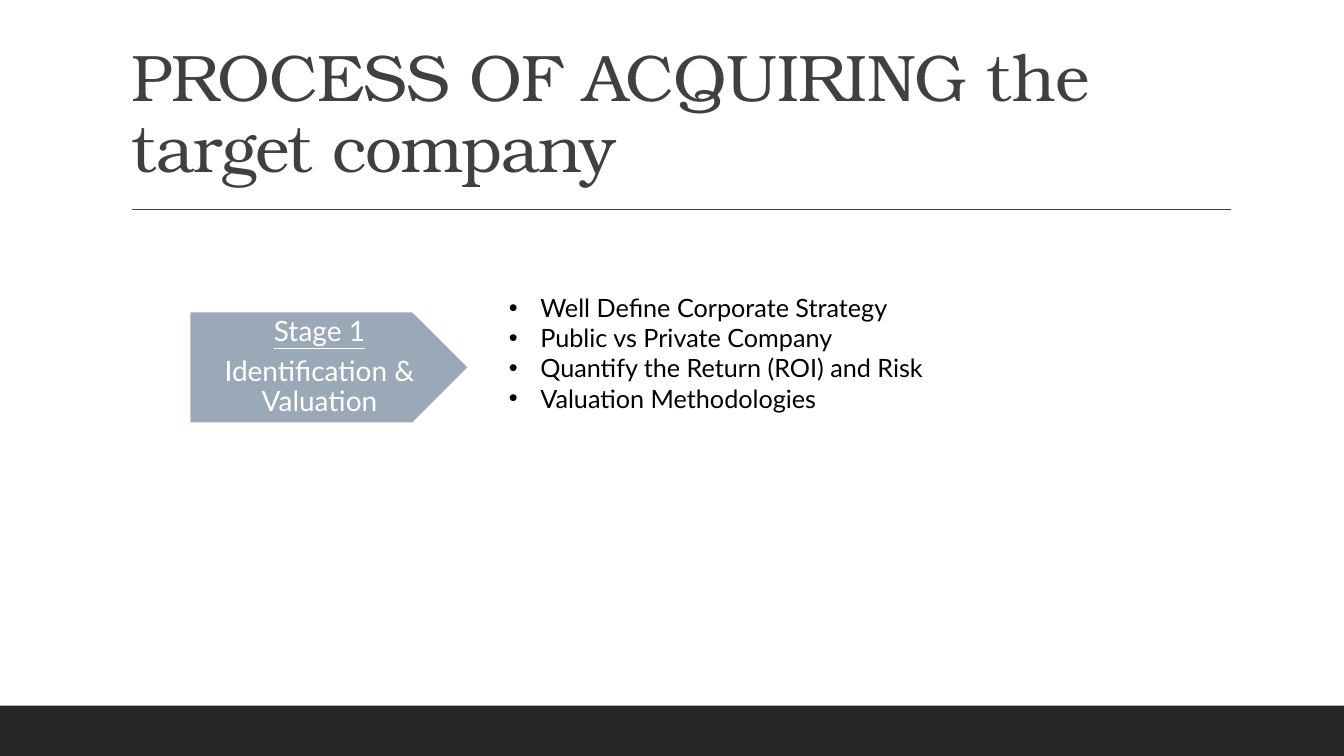
from lxml import etree
from pptx import Presentation
from pptx.dml.color import RGBColor
from pptx.enum.shapes import MSO_CONNECTOR, MSO_SHAPE
from pptx.enum.text import MSO_ANCHOR, MSO_AUTO_SIZE, PP_ALIGN
from pptx.oxml.ns import qn
from pptx.util import Pt

LEFT, CENTER = PP_ALIGN.LEFT, PP_ALIGN.CENTER
BOTTOM, MIDDLE, TOP = MSO_ANCHOR.BOTTOM, MSO_ANCHOR.MIDDLE, MSO_ANCHOR.TOP
NO_AUTOFIT = MSO_AUTO_SIZE.NONE
RECTANGLE, PENTAGON = MSO_SHAPE.RECTANGLE, MSO_SHAPE.PENTAGON
STRAIGHT = MSO_CONNECTOR.STRAIGHT


def color(hex_value):
    return RGBColor.from_string(hex_value)


def write(frame, lines, font_name, size, hex_value, paragraph_format, frame_format):
    for name, value in frame_format.items():
        setattr(frame, name, value)
    frame.text = "\n".join(lines)
    for paragraph in frame.paragraphs:
        for name, value in paragraph_format.items():
            setattr(paragraph, name, value)
        font = paragraph.runs[0].font
        font.name, font.size = font_name, Pt(size)
        font.color.rgb = color(hex_value)


prs = Presentation()
prs.slide_width, prs.slide_height = Pt(960), Pt(540)
slide = prs.slides.add_slide(prs.slide_layouts[5])
shapes = slide.shapes

footer_band = shapes.add_shape(RECTANGLE, Pt(0), Pt(504), Pt(960), Pt(36))
footer_band.shadow.inherit = False
footer_band.fill.solid()
footer_band.fill.fore_color.rgb = color("262626")
footer_band.line.fill.background()

title_rule = shapes.add_connector(STRAIGHT, Pt(94.3), Pt(149.5), Pt(879), Pt(149.5))
title_rule.line.color.rgb = color("404040")
title_rule.line.width = Pt(1)
etree.SubElement(title_rule._element.spPr, qn("a:effectLst"))

title = shapes.title
title.left, title.top, title.width, title.height = Pt(86.4), Pt(22.3), Pt(792), Pt(114.5)
write(title.text_frame, ["PROCESS OF ACQUIRING the target company"],
      "TeX Gyre Bonum", 47, "404040",
      {"alignment": LEFT, "line_spacing": 0.9},
      {"auto_size": NO_AUTOFIT, "word_wrap": True, "vertical_anchor": BOTTOM})
title.text_frame.paragraphs[0].runs[0].font._element.set("spc", "-50")

stage = shapes.add_shape(PENTAGON, Pt(135.4), Pt(222.5), Pt(199.4), Pt(79.9))
stage.shadow.inherit = False
stage.fill.solid()
stage.fill.fore_color.rgb = color("9BA8B7")
stage.line.color.rgb = color("FFFFFF")
stage.line.width = Pt(1.25)
write(stage.text_frame, ["Stage 1", "Identification & Valuation"],
      "Lato", 20, "FFFFFF",
      {"alignment": CENTER, "line_spacing": 0.9, "space_after": Pt(7)},
      {"word_wrap": True, "vertical_anchor": MIDDLE,
       "margin_left": Pt(8.4), "margin_right": Pt(2.1),
       "margin_top": Pt(4.2), "margin_bottom": Pt(4.2)})
stage.text_frame.paragraphs[0].runs[0].font.underline = True

steps = shapes.add_textbox(Pt(356.4), Pt(205.2), Pt(321), Pt(138.2))
write(steps.text_frame,
      ["Well Define Corporate Strategy", "Public vs Private Company",
       "Quantify the Return (ROI) and Risk", "Valuation Methodologies"],
      "Lato", 18, "000000", {"alignment": LEFT},
      {"word_wrap": True, "vertical_anchor": TOP})
for step in steps.text_frame.paragraphs:
    properties = step._p.get_or_add_pPr()
    properties.set("marL", str(Pt(22.5)))
    properties.set("indent", str(-Pt(22.5)))
    etree.SubElement(properties, qn("a:buFont")).set("typeface", "Arial")
    etree.SubElement(properties, qn("a:buChar")).set("char", "•")

prs.save("out.pptx")
